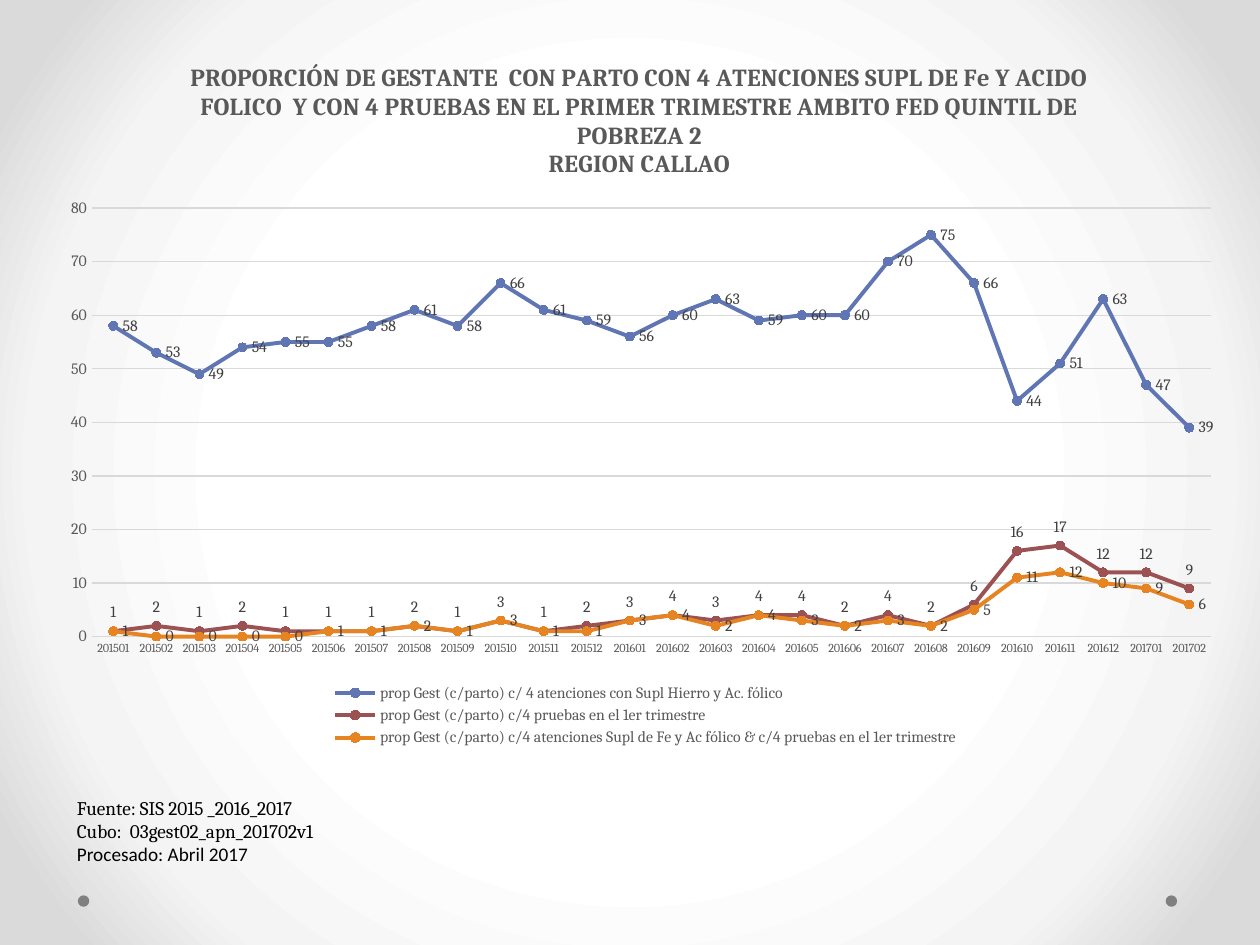
from lxml.etree import SubElement
from pptx import Presentation
from pptx.chart.data import CategoryChartData
from pptx.dml.color import RGBColor
from pptx.enum.chart import (XL_CHART_TYPE, XL_LABEL_POSITION, XL_LEGEND_POSITION,
                             XL_MARKER_STYLE, XL_TICK_MARK)
from pptx.enum.shapes import MSO_SHAPE
from pptx.enum.text import MSO_AUTO_SIZE
from pptx.oxml import parse_xml
from pptx.oxml.ns import nsdecls, qn
from pptx.util import Cm, Pt

COLORS = {
    "text": "000000", "muted": "595959", "label": "404040", "grid": "D9D9D9",
    "dot": "808080", "hierro": "6076B4", "pruebas": "9C5252", "ambas": "E68422",
}
BACKGROUND_STOPS = [(50, "FFFFFF"), (76, "F4F4F4"), (92, "DADADA")]
TITLE = [
    "PROPORCIÓN DE GESTANTE  CON PARTO CON 4 ATENCIONES SUPL DE Fe Y ACIDO "
    "FOLICO  Y CON 4 PRUEBAS EN EL PRIMER TRIMESTRE AMBITO FED QUINTIL DE POBREZA 2",
    "REGION CALLAO",
]
MONTHS = [f"{year}{month:02d}" for year, count in ((2015, 12), (2016, 12), (2017, 2))
          for month in range(1, count + 1)]
SERIES = [
    ("prop Gest (c/parto) c/ 4 atenciones con Supl Hierro y Ac. fólico",
     "hierro", XL_LABEL_POSITION.RIGHT,
     [58, 53, 49, 54, 55, 55, 58, 61, 58, 66, 61, 59, 56,
      60, 63, 59, 60, 60, 70, 75, 66, 44, 51, 63, 47, 39]),
    ("prop Gest (c/parto) c/4 pruebas en el 1er trimestre",
     "pruebas", XL_LABEL_POSITION.ABOVE,
     [1, 2, 1, 2, 1, 1, 1, 2, 1, 3, 1, 2, 3,
      4, 3, 4, 4, 2, 4, 2, 6, 16, 17, 12, 12, 9]),
    ("prop Gest (c/parto) c/4 atenciones Supl de Fe y Ac fólico & c/4 pruebas en el 1er trimestre",
     "ambas", XL_LABEL_POSITION.RIGHT,
     [1, 0, 0, 0, 0, 1, 1, 2, 1, 3, 1, 1, 3,
      4, 2, 4, 3, 2, 3, 2, 5, 11, 12, 10, 9, 6]),
]


def color(name):
    return RGBColor.from_string(COLORS[name])


def format_font(font, size, name="text", bold=False, family="Cambria"):
    font.name = family
    font.size = Pt(size)
    font.bold = bold
    font.color.rgb = color(name)


def write_text(paragraph, text, **style):
    run = paragraph.add_run()
    run.text = text
    format_font(run.font, **style)


def set_background(slide):
    slide.background.fill.solid()
    properties = slide.background._cSld.bg.bgPr
    stops = "".join(f'<a:gs pos="{position * 1000}"><a:srgbClr val="{value}"/></a:gs>'
                    for position, value in BACKGROUND_STOPS)
    gradient = parse_xml(
        f'<a:gradFill {nsdecls("a")} rotWithShape="1"><a:gsLst>{stops}</a:gsLst>'
        '<a:path path="circle"><a:fillToRect l="50000" t="50000" r="50000" b="50000"/>'
        '</a:path></a:gradFill>')
    properties.replace(properties.find(qn("a:solidFill")), gradient)


def set_layout(parent, index, inner=False, **fractions):
    for old in parent.findall(qn("c:layout")):
        parent.remove(old)
    layout = parse_xml(f'<c:layout {nsdecls("c")}><c:manualLayout/></c:layout>')
    if inner:
        SubElement(layout[0], qn("c:layoutTarget"), val="inner")
    for mode in ("xMode", "yMode"):
        SubElement(layout[0], qn(f"c:{mode}"), val="edge")
    for key, value in fractions.items():
        SubElement(layout[0], qn(f"c:{key}"), val=str(value))
    parent.insert(index, layout)


def format_axes(chart):
    for axis, size in ((chart.category_axis, 7), (chart.value_axis, 9)):
        axis.major_tick_mark = axis.minor_tick_mark = XL_TICK_MARK.NONE
        format_font(axis.tick_labels.font, size, "muted")
    category_line = chart.category_axis.format.line
    grid_line = chart.value_axis.major_gridlines.format.line
    for line in (category_line, grid_line):
        line.color.rgb = color("grid")
        line.width = Pt(0.75)
    values = chart.value_axis
    values.format.line.fill.background()
    values.minimum_scale, values.maximum_scale, values.major_unit = 0, 80, 10
    values.tick_labels.number_format = "0"
    values.tick_labels.number_format_is_linked = False


def format_series(series, color_name, label_position):
    series.smooth = False
    series.format.line.color.rgb = color(color_name)
    series.format.line.width = Pt(2.25)
    series.marker.style = XL_MARKER_STYLE.CIRCLE
    series.marker.size = 5
    series.marker.format.fill.solid()
    series.marker.format.fill.fore_color.rgb = color(color_name)
    series.marker.format.line.color.rgb = color(color_name)
    labels = series.data_labels
    labels.show_value = True
    labels.number_format = "0"
    labels.number_format_is_linked = False
    labels.position = label_position
    format_font(labels.font, 9, "label")


def add_proportion_chart(slide, left, top, width, height):
    data = CategoryChartData(number_format="0")
    data.categories = MONTHS
    for name, _, _, values in SERIES:
        data.add_series(name, values)
    chart = slide.shapes.add_chart(
        XL_CHART_TYPE.LINE_MARKERS, left, top, width, height, data).chart
    format_font(chart.font, 10)

    chart.has_title = True
    title_frame = chart.chart_title.text_frame
    for index, line in enumerate(TITLE):
        paragraph = title_frame.add_paragraph() if index else title_frame.paragraphs[0]
        write_text(paragraph, line, size=14, name="muted", bold=True)
    chart.chart_title.include_in_layout = False

    chart.plots[0].vary_by_categories = False
    for series, (_, color_name, position, _) in zip(chart.plots[0].series, SERIES):
        format_series(series, color_name, position)
    format_axes(chart)

    chart.has_legend = True
    chart.legend.position = XL_LEGEND_POSITION.BOTTOM
    chart.legend.include_in_layout = False
    format_font(chart.legend.font, 9, "muted")
    set_layout(chart.legend._element, 1, x=0.23, y=0.9, w=0.55, h=0.1)
    plot_area = chart._chartSpace.chart.plotArea
    set_layout(plot_area, 0, inner=True, x=0.04, y=0.24, w=0.94, h=0.6)


def add_source_note(slide, left, top, width, height):
    frame = slide.shapes.add_textbox(left, top, width, height).text_frame
    frame.word_wrap = True
    frame.auto_size = MSO_AUTO_SIZE.SHAPE_TO_FIT_TEXT
    lines = [("Fuente: SIS 2015 _2016_2017", "Cambria"),
             ("Cubo:  03gest02_apn_201702v1", "Cambria"),
             ("Procesado: Abril 2017", "Calibri")]
    for index, (text, family) in enumerate(lines):
        paragraph = frame.add_paragraph() if index else frame.paragraphs[0]
        write_text(paragraph, text, size=11, family=family)


def add_footer_dots(slide, left, top, width, size):
    for dot_left in (left, left + width - size):
        dot = slide.shapes.add_shape(MSO_SHAPE.OVAL, dot_left, top, size, size)
        dot.shadow.inherit = False
        dot.fill.solid()
        dot.fill.fore_color.rgb = color("dot")
        dot.line.fill.background()


def main():
    presentation = Presentation()
    presentation.slide_width, presentation.slide_height = Cm(25.4), Cm(19.05)
    slide = presentation.slides.add_slide(presentation.slide_layouts[6])
    set_background(slide)
    add_footer_dots(slide, Cm(1.57), Cm(18.05), Cm(22.16), Cm(0.23))
    add_source_note(slide, Cm(1.3), Cm(15.93), Cm(8.2), Cm(2.13))
    add_proportion_chart(slide, Cm(0.89), Cm(0.74), Cm(24), Cm(14.4))
    presentation.save("out.pptx")


if __name__ == "__main__":
    main()
